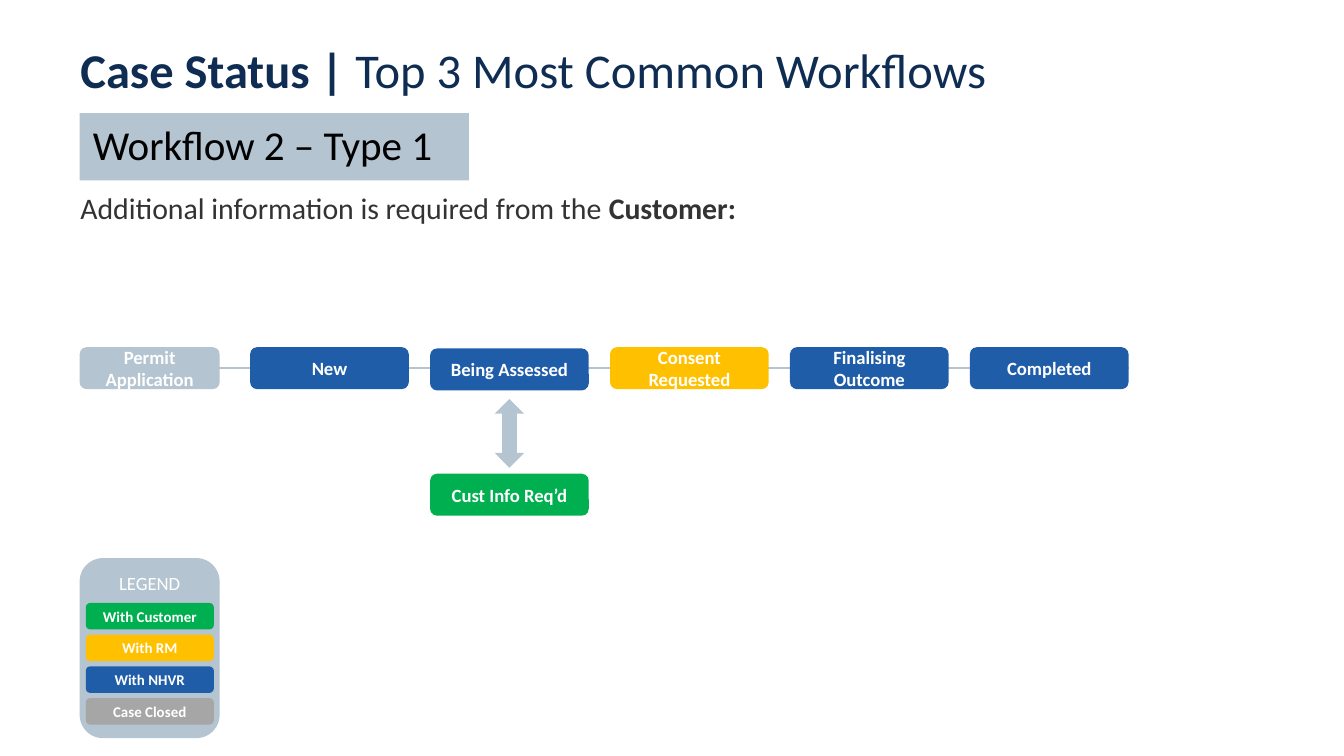
import pptx
import pptx.util
import pptx.dml.color
import pptx.enum.shapes
import pptx.enum.text
import pptx.oxml.ns
from lxml import etree

Pt = pptx.util.Pt
SHAPES = pptx.enum.shapes.MSO_SHAPE
ALIGN = pptx.enum.text.PP_ALIGN
ANCHOR = pptx.enum.text.MSO_ANCHOR

COLOURS = {
    "navy": "0F2D52",
    "text": "333333",
    "black": "000000",
    "white": "FFFFFF",
    "mist": "B4C4D1",
    "blue": "1F5DA9",
    "amber": "FFC000",
    "green": "00B050",
    "grey": "A6A6A6",
}


def colour(name):
    return pptx.dml.color.RGBColor.from_string(COLOURS[name])


class SlideBuilder:
    font_name = "Calibri"

    def __init__(self, slide):
        self.slide = slide

    def format_runs(self, paragraph, size, colour_name, bold=False):
        for run in paragraph.runs:
            run.font.name = self.font_name
            run.font.size = Pt(size)
            run.font.bold = bold
            run.font.color.rgb = colour(colour_name)

    def text(self, left, top, width, height, parts, size, colour_name, margin_top):
        """Add one paragraph made of (wording, bold) parts."""
        box = self.slide.shapes.add_textbox(Pt(left), Pt(top), Pt(width), Pt(height))
        frame = box.text_frame
        frame.word_wrap = True
        frame.margin_top = Pt(margin_top)
        paragraph = frame.paragraphs[0]
        for wording, bold in parts:
            paragraph.add_run().text = wording
        self.format_runs(paragraph, size, colour_name)
        for run, (wording, bold) in zip(paragraph.runs, parts):
            run.font.bold = bold

    def shape(self, kind, left, top, width, height, fill):
        shape = self.slide.shapes.add_shape(
            kind, Pt(left), Pt(top), Pt(width), Pt(height))
        shape.shadow.inherit = False
        shape.fill.solid()
        shape.fill.fore_color.rgb = colour(fill)
        shape.line.fill.background()
        return shape

    def label(self, shape, wording, size, colour_name="white", bold=True,
              align=ALIGN.CENTER, anchor=ANCHOR.MIDDLE):
        frame = shape.text_frame
        frame.text = wording
        frame.word_wrap = True
        frame.vertical_anchor = anchor
        frame.paragraphs[0].alignment = align
        self.format_runs(frame.paragraphs[0], size, colour_name, bold)

    def pill(self, left, top, width, height, wording, fill, size):
        shape = self.shape(SHAPES.ROUNDED_RECTANGLE, left, top, width, height, fill)
        self.label(shape, wording, size)
        return shape

    def line(self, start_x, start_y, end_x, end_y):
        connector = self.slide.shapes.add_connector(
            pptx.enum.shapes.MSO_CONNECTOR.STRAIGHT,
            Pt(start_x), Pt(start_y), Pt(end_x), Pt(end_y))
        connector.line.color.rgb = colour("mist")
        connector.line.width = Pt(0.75)
        etree.SubElement(connector._element.spPr, pptx.oxml.ns.qn("a:effectLst"))
        return connector


def main():
    presentation = pptx.Presentation()
    presentation.slide_width = Pt(720)
    presentation.slide_height = Pt(405)
    builder = SlideBuilder(
        presentation.slides.add_slide(presentation.slide_layouts[6]))

    left_edge, left_width = 42.7, 75
    step_left, step_pitch, step_width = 134, 96.4, 85
    step_top, step_height = 186, 22.5
    assessed_left = step_left + step_pitch

    flow_line = builder.line(88.6, 197.25, 604.6, 197.25)

    legend = builder.shape(SHAPES.ROUNDED_RECTANGLE, left_edge, 299, left_width, 96.5, "mist")
    builder.label(legend, "LEGEND", 10, bold=False, anchor=ANCHOR.TOP)

    builder.text(36, 16.6, 648, 46,
                 [("Case Status | ", True), ("Top 3 Most Common Workflows", False)],
                 26, "navy", margin_top=5)
    builder.text(36, 75, 648, 286.5,
                 [("Additional information is required from the ", False), ("Customer:", True)],
                 16, "text", margin_top=26.5)

    heading = builder.shape(SHAPES.RECTANGLE, left_edge, 60.7, 208.5, 36, "mist")
    builder.label(heading, "Workflow 2 – Type 1", 22, "black", False,
                  ALIGN.LEFT, ANCHOR.TOP)

    builder.pill(left_edge, step_top, left_width, step_height,
                 "Permit Application", "mist", 10)
    steps = [
        ("New", "blue", 0),
        ("Being Assessed", "blue", 0.7),
        ("Consent Requested", "amber", 0),
        ("Finalising Outcome", "blue", 0),
        ("Completed", "blue", 0),
    ]
    for index, (wording, fill, drop) in enumerate(steps):
        step = builder.pill(step_left + index * step_pitch, step_top + drop,
                            step_width, step_height, wording, fill, 10)
    flow_line.end_connect(step, 3)

    arrow_width = 15.8
    builder.shape(SHAPES.UP_DOWN_ARROW,
                  assessed_left + (step_width - arrow_width) / 2, 213.8,
                  arrow_width, 36.8, "mist")
    builder.pill(assessed_left, 253.8, step_width, step_height,
                 "Cust Info Req’d", "green", 10)

    legend_entries = [("With Customer", "green"), ("With RM", "amber"),
                      ("With NHVR", "blue"), ("Case Closed", "grey")]
    for index, (wording, fill) in enumerate(legend_entries):
        builder.pill(46, 323 + index * 17, 68.6, 14.2, wording, fill, 8)

    presentation.save("out.pptx")


if __name__ == "__main__":
    main()
